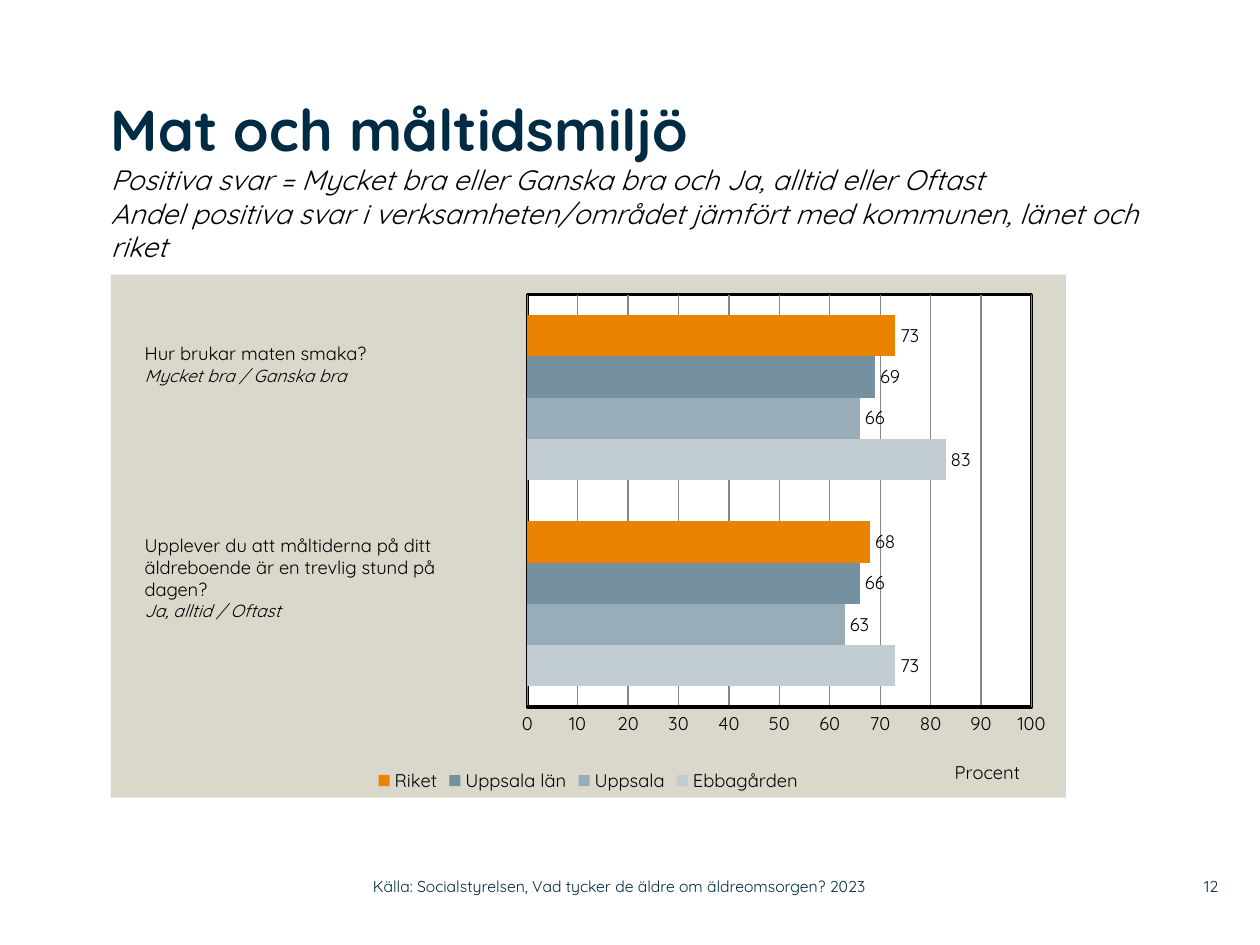
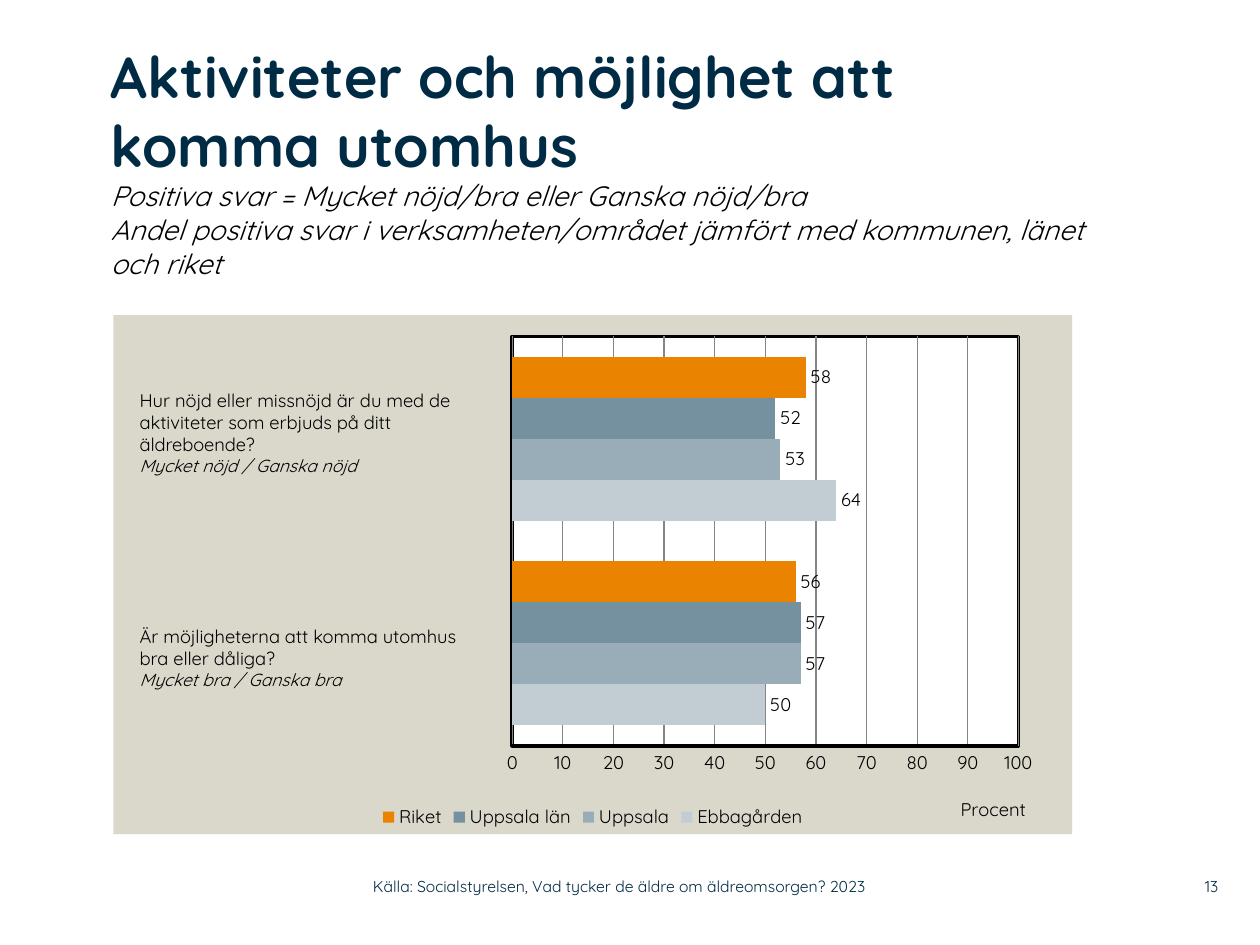
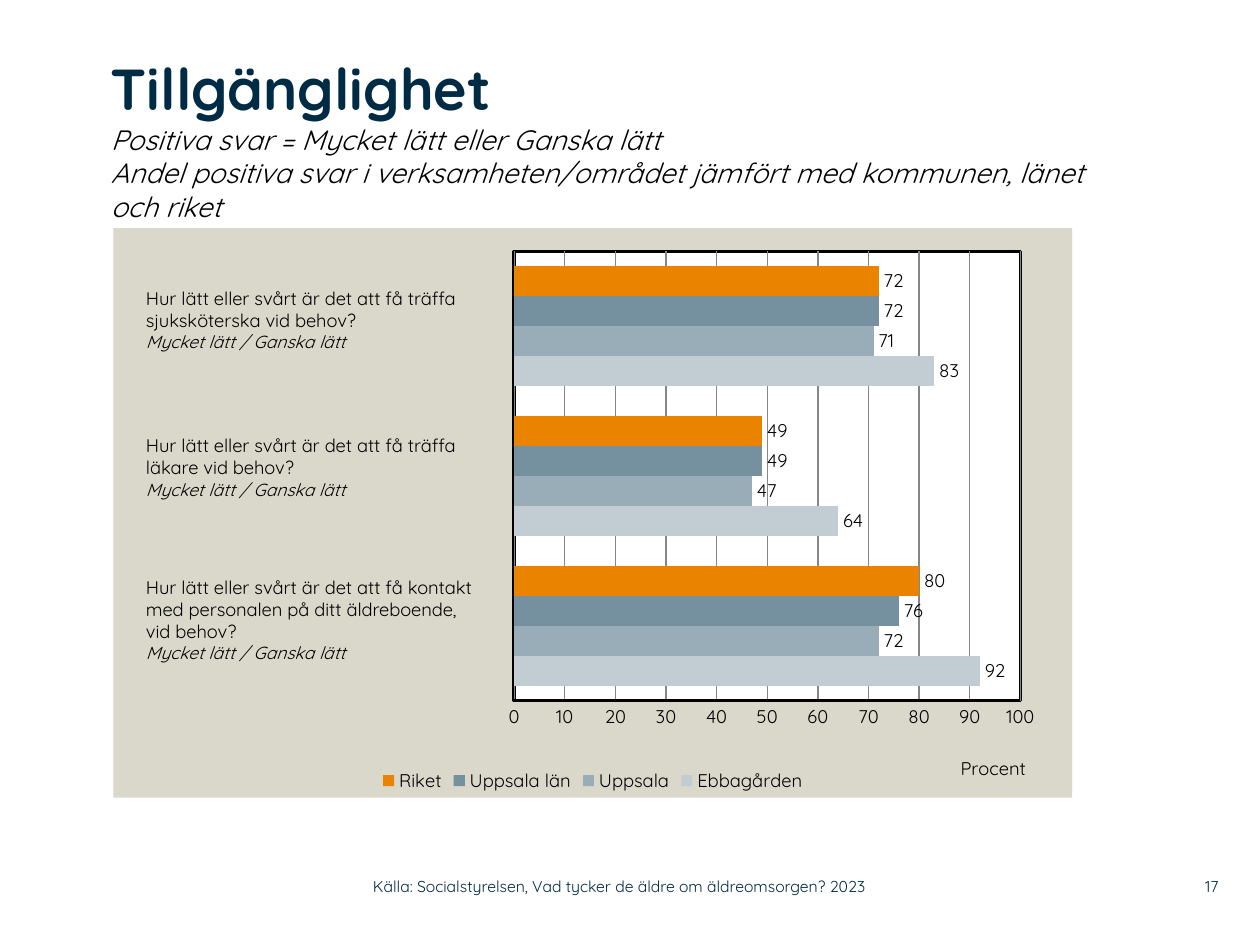
from lxml.etree import SubElement
from pptx import Presentation
from pptx.chart.data import CategoryChartData
from pptx.dml.color import RGBColor
from pptx.enum.chart import XL_CHART_TYPE, XL_LABEL_POSITION, XL_LEGEND_POSITION, XL_TICK_MARK
from pptx.enum.text import MSO_ANCHOR, MSO_AUTO_SIZE, PP_ALIGN
from pptx.oxml import parse_xml
from pptx.oxml.ns import nsdecls, qn
from pptx.util import Inches, Pt

FONT = "Quicksand"
NAVY, BLACK, WHITE, SAND, GRID = "002B45", "000000", "FFFFFF", "DAD7CB", "868686"
SERIES = [("Ebbagården", "C2CDD3"), ("Uppsala", "99ADB9"),
          ("Uppsala län", "75909F"), ("Riket", "E98300")]
COMPARISON = "Andel positiva svar i verksamheten/området jämfört med kommunen, länet och riket"
SOURCE = "Källa: Socialstyrelsen, Vad tycker de äldre om äldreomsorgen? 2023"
PLOT_WIDTH, PLOT_HEIGHT = 0.528, 0.789

SLIDES = [
    {
        "number": "12",
        "title": "Mat och måltidsmiljö",
        "positive": "Positiva svar = Mycket bra eller Ganska bra och Ja, alltid eller Oftast",
        "title_area": (0.88, 0.74, 8.42, 1.44),
        "chart_area": (0.88, 2.18, 7.58, 4.15),
        "plot_corner": (0.436, 0.038),
        "values": [(73, 83), (63, 66), (66, 69), (68, 73)],
        "questions": [
            ((1.05, 2.67, 2.77, 0.63),
             ["Hur brukar maten smaka?", "Mycket bra / Ganska bra"]),
            ((1.05, 4.19, 2.77, 0.98),
             ["Upplever du att måltiderna på ditt äldreboende är en trevlig stund på",
              "dagen?", "Ja, alltid / Oftast"]),
        ],
    },
    {
        "number": "13",
        "title": "Aktiviteter och möjlighet att komma utomhus",
        "positive": "Positiva svar = Mycket nöjd/bra eller Ganska nöjd/bra",
        "title_area": (0.88, 0.32, 7.8, 1.89),
        "chart_area": (0.9, 2.5, 7.61, 4.12),
        "plot_corner": (0.416, 0.041),
        "values": [(50, 64), (57, 53), (57, 52), (56, 58)],
        "questions": [
            ((1.01, 3.04, 3, 0.98),
             ["Hur nöjd eller missnöjd är du med de aktiviteter som erbjuds på ditt äldreboende?",
              "Mycket nöjd / Ganska nöjd"]),
            ((1.01, 4.91, 3.01, 0.81),
             ["Är möjligheterna att komma utomhus", "bra eller dåliga?",
              "Mycket bra / Ganska bra"]),
        ],
    },
    {
        "number": "17",
        "title": "Tillgänglighet",
        "positive": "Positiva svar = Mycket lätt eller Ganska lätt",
        "title_area": (0.88, 0.42, 7.77, 1.39),
        "chart_area": (0.9, 1.81, 7.61, 4.52),
        "plot_corner": (0.418, 0.041),
        "values": [(92, 64, 83), (72, 47, 71), (76, 49, 72), (80, 49, 72)],
        "questions": [
            ((1.06, 2.23, 2.99, 0.81),
             ["Hur lätt eller svårt är det att få träffa sjuksköterska vid behov?",
              "Mycket lätt / Ganska lätt"]),
            ((1.06, 3.4, 2.93, 0.81),
             ["Hur lätt eller svårt är det att få träffa", "läkare vid behov?",
              "Mycket lätt / Ganska lätt"]),
            ((1.06, 4.52, 3.01, 0.98),
             ["Hur lätt eller svårt är det att få kontakt",
              "med personalen på ditt äldreboende,", "vid behov?",
              "Mycket lätt / Ganska lätt"]),
        ],
    },
]


def color(value):
    return RGBColor.from_string(value)


def inches(area):
    return [Inches(length) for length in area]


def style(font, size, shade=BLACK, bold=False, italic=False):
    font.name, font.size, font.bold, font.italic = FONT, Pt(size), bold, italic
    font.color.rgb = color(shade)


def remove_margins(frame):
    frame.margin_left = frame.margin_right = frame.margin_top = frame.margin_bottom = 0


def add_title(page, content):
    title = page.shapes.title
    title.left, title.top, title.width, title.height = inches(content["title_area"])
    frame = title.text_frame
    remove_margins(frame)
    frame.word_wrap = True
    frame.auto_size = MSO_AUTO_SIZE.NONE
    frame.vertical_anchor = MSO_ANCHOR.TOP
    frame.text = "\v".join([content["title"], content["positive"], COMPARISON])
    para = frame.paragraphs[0]
    para.alignment = PP_ALIGN.LEFT
    heading, *subtitle = para.runs
    style(heading.font, 33, NAVY, bold=True)
    for span in subtitle:
        style(span.font, 16, italic=True)


def add_question(page, area, lines):
    frame = page.shapes.add_textbox(*inches(area)).text_frame
    frame.word_wrap = True
    frame.text = "\n".join(lines)
    *question, answers = frame.paragraphs
    for para in question:
        style(para.runs[0].font, 10.5)
    style(answers.runs[0].font, 10, italic=True)


def add_footer(page, area, text, alignment):
    frame = page.shapes.add_textbox(*inches(area)).text_frame
    remove_margins(frame)
    frame.word_wrap = True
    frame.vertical_anchor = MSO_ANCHOR.MIDDLE
    frame.text = text
    para = frame.paragraphs[0]
    para.alignment = alignment
    style(para.runs[0].font, 9, NAVY)


def place(parent, index, **settings):
    for old in parent.findall(qn("c:layout")):
        parent.remove(old)
    layout = parse_xml(f"<c:layout {nsdecls('c')}/>")
    manual = SubElement(layout, qn("c:manualLayout"))
    for name, value in settings.items():
        SubElement(manual, qn(f"c:{name}")).set("val", str(value))
    parent.insert(index, layout)


def area_format(fill, line):
    return parse_xml(
        f"<c:spPr {nsdecls('c', 'a')}><a:solidFill><a:srgbClr val='{fill}'/></a:solidFill>"
        f"{line}</c:spPr>")


def add_bars(page, content):
    data = CategoryChartData(number_format="0")
    data.categories = [str(i + 1) for i in range(len(content["questions"]))]
    for (name, _), values in zip(SERIES, content["values"]):
        data.add_series(name, values)
    chart = page.shapes.add_chart(
        XL_CHART_TYPE.BAR_CLUSTERED, *inches(content["chart_area"]), data).chart
    style(chart.font, 10.5)
    chart.has_title = False
    chart.has_legend = True
    chart.legend.position = XL_LEGEND_POSITION.BOTTOM
    chart.legend.include_in_layout = False
    style(chart.legend.font, 10.5)

    plot = chart.plots[0]
    plot.gap_width, plot.overlap, plot.vary_by_categories = 100, 0, False
    for series, (_, shade) in zip(plot.series, SERIES):
        series.format.fill.solid()
        series.format.fill.fore_color.rgb = color(shade)
        labels = series.data_labels
        labels.show_value = True
        labels.position = XL_LABEL_POSITION.OUTSIDE_END
        style(labels.font, 10.5)

    chart.category_axis.visible = False
    axis = chart.value_axis
    axis.minimum_scale, axis.maximum_scale, axis.major_unit = 0, 100, 10
    axis.major_tick_mark = axis.minor_tick_mark = XL_TICK_MARK.NONE
    axis.format.line.color.rgb = color(BLACK)
    axis.format.line.width = Pt(2)
    axis.major_gridlines.format.line.color.rgb = color(GRID)
    axis.major_gridlines.format.line.width = Pt(0.75)
    style(axis.tick_labels.font, 10.5)
    axis.axis_title.text_frame.text = "Procent"
    style(axis.axis_title.text_frame.paragraphs[0].runs[0].font, 10.5)
    title_node = axis._element.find(qn("c:title"))
    place(title_node, 1, xMode="edge", yMode="edge", x=0.88, y=0.92)

    left, top = content["plot_corner"]
    chart_node = chart._chartSpace.find(qn("c:chart"))
    plot_node = chart_node.find(qn("c:plotArea"))
    place(plot_node, 0, layoutTarget="inner", xMode="edge", yMode="edge",
          x=left, y=top, w=PLOT_WIDTH, h=PLOT_HEIGHT)
    border = f"<a:ln w='{Pt(2)}'><a:solidFill><a:srgbClr val='{BLACK}'/></a:solidFill></a:ln>"
    plot_node.append(area_format(WHITE, border))
    chart_node.addnext(area_format(SAND, "<a:ln><a:noFill/></a:ln>"))


def main():
    deck = Presentation()
    deck.slide_width, deck.slide_height = Inches(10), Inches(7.5)
    for content in SLIDES:
        page = deck.slides.add_slide(deck.slide_layouts.get_by_name("Title Only"))
        add_bars(page, content)
        add_title(page, content)
        for area, lines in content["questions"]:
            add_question(page, area, lines)
        add_footer(page, (9.2, 6.89, 0.47, 0.29), content["number"], PP_ALIGN.RIGHT)
        add_footer(page, (2.96, 6.89, 4.43, 0.29), SOURCE, PP_ALIGN.LEFT)
    deck.save("out.pptx")


if __name__ == "__main__":
    main()
